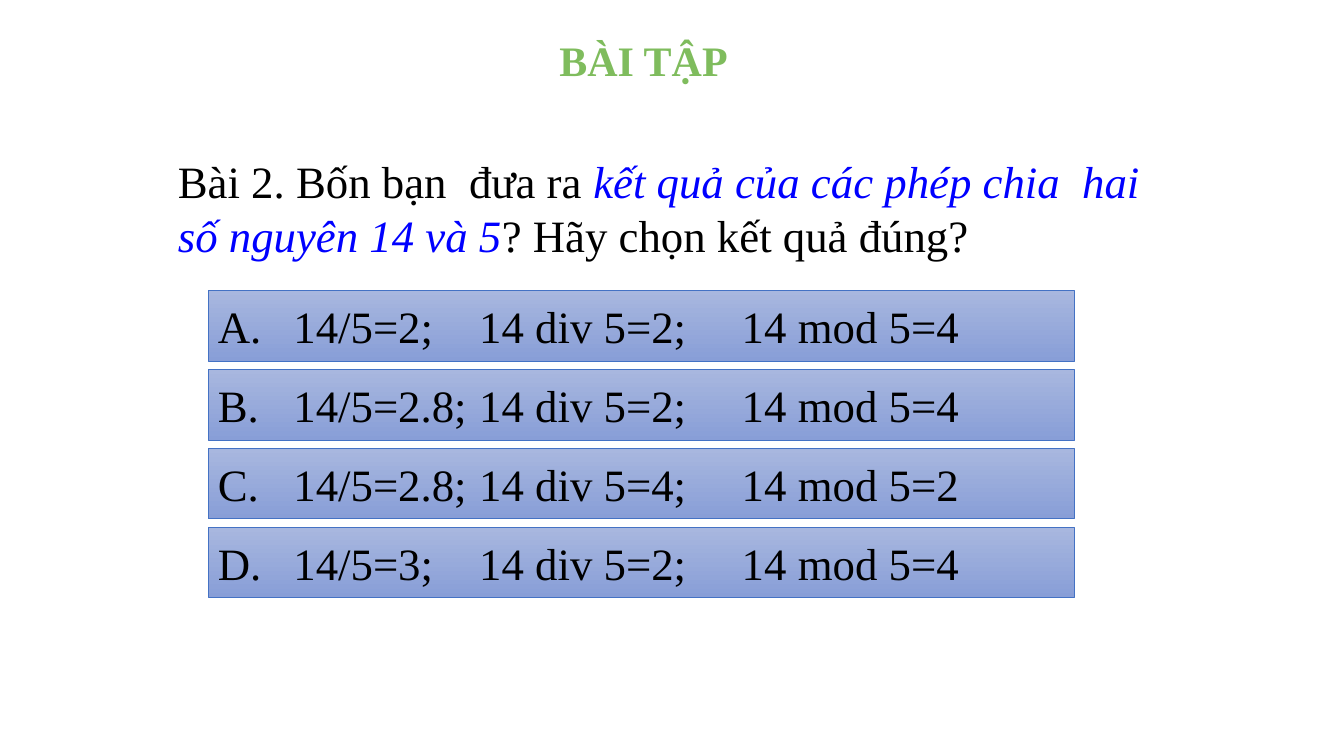
from lxml.etree import SubElement
from pptx import Presentation
from pptx.dml.color import RGBColor
from pptx.enum.shapes import MSO_SHAPE
from pptx.enum.text import MSO_ANCHOR, PP_ALIGN
from pptx.oxml.ns import qn
from pptx.util import Pt

# Content
TITLE = "BÀI TẬP"
QUESTION = [
    ("Bài 2. Bốn bạn  đưa ra ", False),
    ("kết quả của các phép chia  hai số nguyên 14 và 5", True),
    ("? Hãy chọn kết quả đúng?", False),
]
ANSWERS = [
    ("A.", "14/5=2;", "14 div 5=2;", "14 mod 5=4"),
    ("B.", "14/5=2.8;", "14 div 5=2;", "14 mod 5=4"),
    ("C.", "14/5=2.8;", "14 div 5=4;", "14 mod 5=2"),
    ("D.", "14/5=3;", "14 div 5=2;", "14 mod 5=4"),
]

# Look and layout, in px
FONT = "Times New Roman"
BLACK = RGBColor(0x00, 0x00, 0x00)
BLUE = RGBColor(0x00, 0x00, 0xFF)
GREEN = RGBColor(0x7F, 0xBC, 0x5D)
BAR_TOP = RGBColor(0xA8, 0xB7, 0xDF)
BAR_BOTTOM = RGBColor(0x88, 0x9E, 0xD7)
BAR_LINE = RGBColor(0x44, 0x72, 0xC4)
EMU_PER_PX = 9525
TITLE_BOX = (422, 28, 382, 59)
QUESTION_BOX = (160, 142, 938, 113)
BAR_X, BAR_Y, BAR_W, BAR_H, BAR_STEP = 198, 277, 825, 67, 75
TAB_STOPS = (72, 249, 499)


def px(*lengths):
    return [n * EMU_PER_PX for n in lengths]


def add_text(p, text, size=32, color=BLACK, bold=False, italic=False):
    r = p.add_run()
    r.text = text
    r.font.name, r.font.size = FONT, Pt(size)
    r.font.bold, r.font.italic = bold, italic
    r.font.color.rgb = color


def add_box(s, box):
    tf = s.shapes.add_textbox(*px(*box)).text_frame
    tf.word_wrap = True
    return tf.paragraphs[0]


def add_answer(s, parts, y):
    sp = s.shapes.add_shape(MSO_SHAPE.RECTANGLE, *px(BAR_X, y, BAR_W, BAR_H))
    sp.shadow.inherit = False
    sp.fill.gradient()
    sp.fill.gradient_angle = 270
    for stop, color, position in zip(sp.fill.gradient_stops, (BAR_TOP, BAR_BOTTOM), (0, 1)):
        stop.color.rgb = color
        stop.position = position
    sp.line.color.rgb = BAR_LINE
    sp.line.width = Pt(0.5)
    tf = sp.text_frame
    tf.word_wrap = True
    tf.vertical_anchor = MSO_ANCHOR.MIDDLE
    p = tf.paragraphs[0]
    p.alignment = PP_ALIGN.LEFT
    # Tab stops line up the three results
    tabs = SubElement(p._p.get_or_add_pPr(), qn("a:tabLst"))
    for pos in px(*TAB_STOPS):
        SubElement(tabs, qn("a:tab"), pos=str(pos), algn="l")
    add_text(p, "\t".join(parts))


def main():
    prs = Presentation()
    prs.slide_width, prs.slide_height = px(1280, 720)
    s = prs.slides.add_slide(prs.slide_layouts[6])

    # Question
    p = add_box(s, QUESTION_BOX)
    for text, stressed in QUESTION:
        add_text(p, text, color=BLUE if stressed else BLACK, italic=stressed)

    # Title
    p = add_box(s, TITLE_BOX)
    p.alignment = PP_ALIGN.CENTER
    add_text(p, TITLE, size=30, color=GREEN, bold=True)

    # Answers
    for i, parts in enumerate(ANSWERS):
        add_answer(s, parts, BAR_Y + i * BAR_STEP)

    prs.save("out.pptx")


if __name__ == "__main__":
    main()
